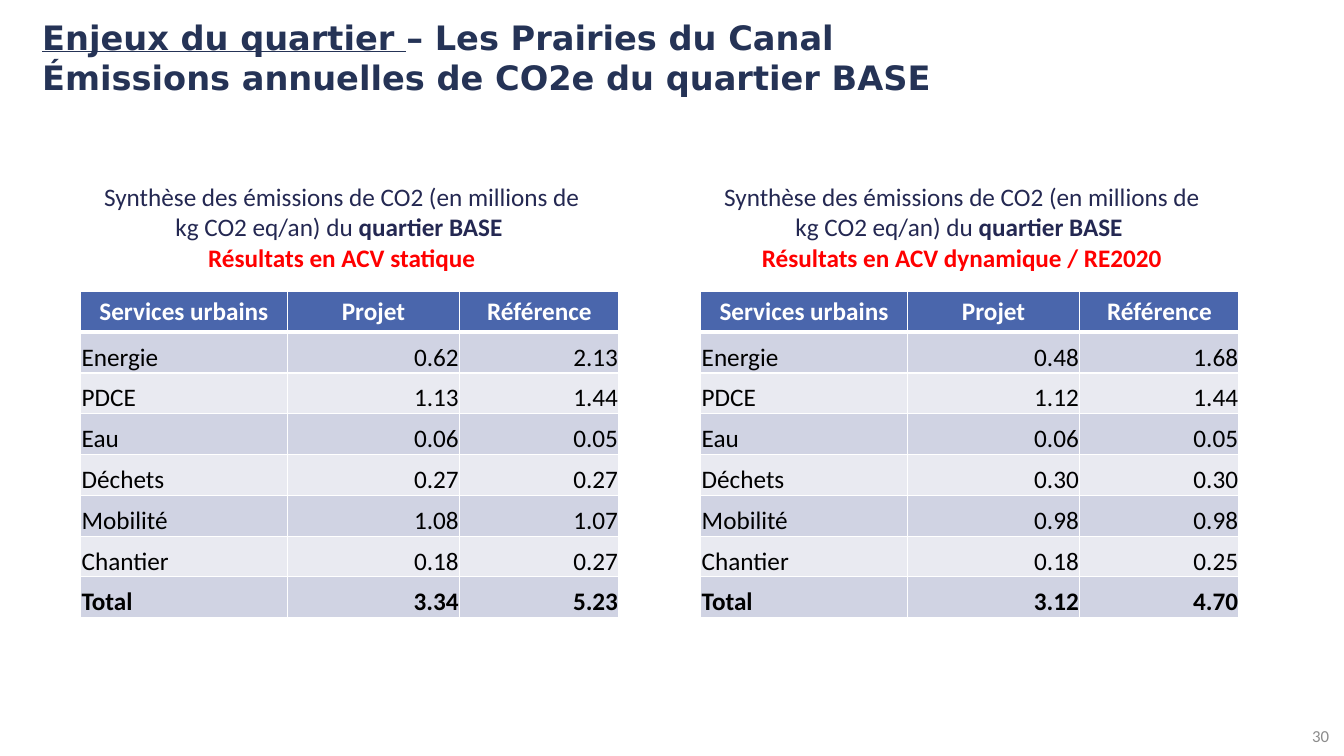
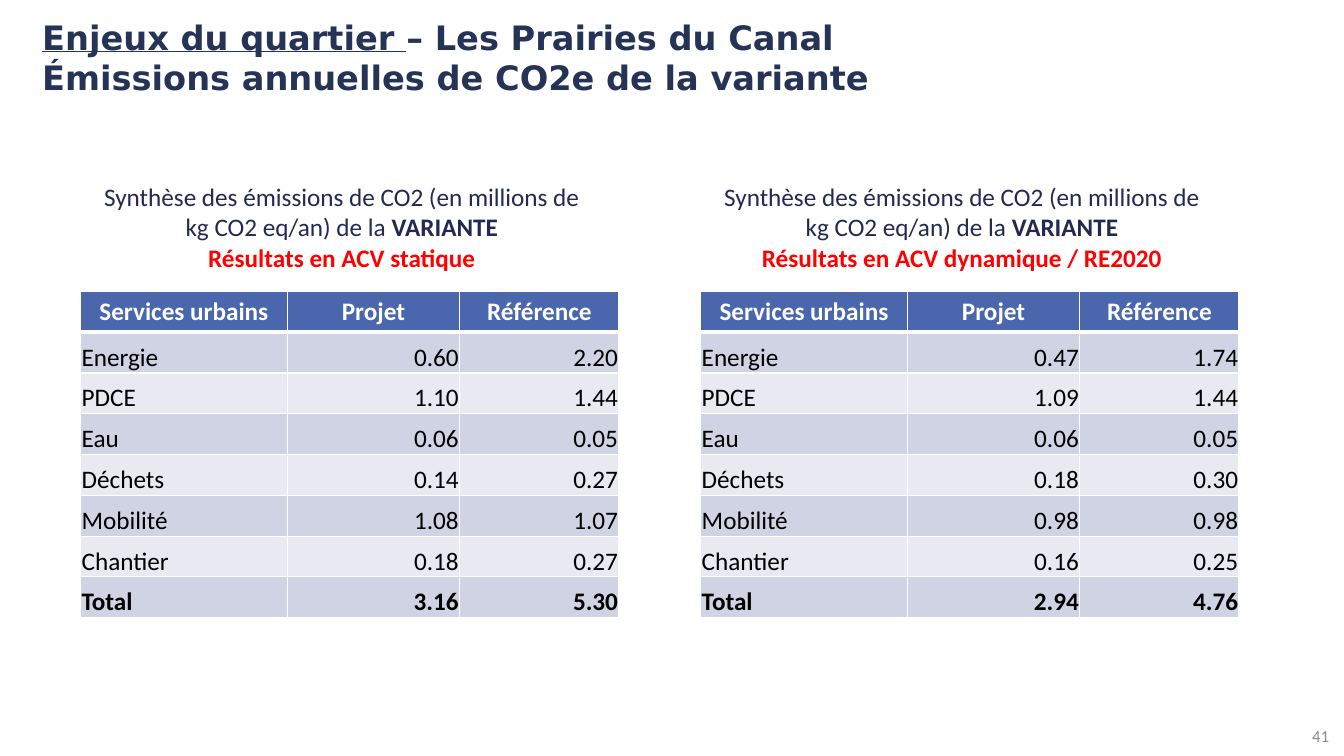
from dataclasses import dataclass

from lxml import etree
from pptx import Presentation
from pptx.dml.color import RGBColor
from pptx.enum.text import MSO_ANCHOR, PP_ALIGN
from pptx.oxml.ns import qn
from pptx.slide import Slide
from pptx.table import _Cell
from pptx.text.text import TextFrame, _Paragraph
from pptx.util import Inches, Length, Pt

LEFT, CENTER, RIGHT = PP_ALIGN.LEFT, PP_ALIGN.CENTER, PP_ALIGN.RIGHT
TOP, MIDDLE, BOTTOM = MSO_ANCHOR.TOP, MSO_ANCHOR.MIDDLE, MSO_ANCHOR.BOTTOM


@dataclass(frozen=True)
class Theme:
    title_font: str = "DejaVu Sans"
    body_font: str = "Calibri"
    title_size: int = 24
    body_size: int = 18
    page_size: int = 12
    title: str = "253356"
    caption: str = "242852"
    method: str = "FF0000"
    page: str = "8C8C8C"
    header: str = "4A66AC"
    band_dark: str = "D0D3E3"
    band_light: str = "E9EAF1"
    white: str = "FFFFFF"
    black: str = "000000"
    grid_line: int = 1
    header_line: int = 3


THEME = Theme()


@dataclass(frozen=True)
class Results:
    """Emissions under one life-cycle method, one value per urban service."""
    method: str
    project: tuple[str, ...]
    reference: tuple[str, ...]


@dataclass(frozen=True)
class Synthesis:
    """Content of one slide."""
    page: str
    subject: str
    link: str
    scenario: str
    results: tuple[Results, ...]


TITLE_START = "Enjeux du quartier "
DISTRICT = "– Les Prairies du Canal"
TITLE_SUBJECT = "Émissions annuelles de CO2e "
CAPTION = "Synthèse des émissions de CO2 (en millions de kg CO2 eq/an) "
STATIC = "Résultats en ACV statique"
DYNAMIC = "Résultats en ACV dynamique / RE2020"
HEADERS = ("Services urbains", "Projet", "Référence")
SERVICES = ("Energie", "PDCE", "Eau", "Déchets", "Mobilité", "Chantier", "Total")

SYNTHESES = (
    Synthesis("30", "du quartier BASE", "du ", "quartier BASE ", (
        Results(STATIC,
                ("0.62", "1.13", "0.06", "0.27", "1.08", "0.18", "3.34"),
                ("2.13", "1.44", "0.05", "0.27", "1.07", "0.27", "5.23")),
        Results(DYNAMIC,
                ("0.48", "1.12", "0.06", "0.30", "0.98", "0.18", "3.12"),
                ("1.68", "1.44", "0.05", "0.30", "0.98", "0.25", "4.70")),
    )),
    Synthesis("41", "de la variante", "de la ", "VARIANTE", (
        Results(STATIC,
                ("0.60", "1.10", "0.06", "0.14", "1.08", "0.18", "3.16"),
                ("2.20", "1.44", "0.05", "0.27", "1.07", "0.27", "5.30")),
        Results(DYNAMIC,
                ("0.47", "1.09", "0.06", "0.18", "0.98", "0.16", "2.94"),
                ("1.74", "1.44", "0.05", "0.30", "0.98", "0.25", "4.76")),
    )),
)

# Layout of the two side-by-side panels
PANEL_LEFT, PANEL_STEP = Inches(0.8), Inches(6.15)
CAPTION_TOP, CAPTION_WIDTH, CAPTION_HEIGHT = Inches(1.75), Inches(5.18), Inches(1.01)
TABLE_TOP, TABLE_HEIGHT = Inches(2.89), Inches(3.24)
COLUMN_WIDTHS = (Inches(2.05), Inches(1.71), Inches(1.58))
CELL_MARGIN = Inches(0.01)


def add_text(paragraph: _Paragraph, text: str, size: int, color: str, bold: bool = False,
             underline: bool = False, font: str = THEME.body_font) -> None:
    run = paragraph.add_run()
    run.text = text
    run.font.name = font
    run.font.size = Pt(size)
    run.font.bold = bold
    run.font.underline = underline
    run.font.color.rgb = RGBColor.from_string(color)


def add_box(slide: Slide, left: Length, top: Length, width: Length, height: Length,
            align: PP_ALIGN, anchor: MSO_ANCHOR) -> TextFrame:
    frame = slide.shapes.add_textbox(left, top, width, height).text_frame
    frame.word_wrap = True
    frame.vertical_anchor = anchor
    frame.paragraphs[0].alignment = align
    return frame


def set_borders(cell: _Cell, top: int, bottom: int) -> None:
    """White cell borders, with widths in points."""
    properties = cell._tc.get_or_add_tcPr()
    widths = {"a:lnL": THEME.grid_line, "a:lnR": THEME.grid_line,
              "a:lnT": top, "a:lnB": bottom}
    for position, (side, width) in enumerate(widths.items()):
        line = etree.Element(qn(side), w=str(Pt(width)))
        fill = etree.SubElement(line, qn("a:solidFill"))
        etree.SubElement(fill, qn("a:srgbClr"), val=THEME.white)
        properties.insert(position, line)


def fill_cell(cell: _Cell, text: str, row: int, column: int) -> None:
    is_header = row == 0
    if is_header:
        background, color, align = THEME.header, THEME.white, CENTER
    else:
        background = THEME.band_dark if row % 2 else THEME.band_light
        color, align = THEME.black, RIGHT if column else LEFT
        cell.margin_left = cell.margin_right = cell.margin_top = CELL_MARGIN
        cell.margin_bottom = 0
    cell.vertical_anchor = TOP if is_header else BOTTOM
    cell.fill.solid()
    cell.fill.fore_color.rgb = RGBColor.from_string(background)
    set_borders(cell, THEME.header_line if row == 1 else THEME.grid_line,
                THEME.header_line if is_header else THEME.grid_line)
    paragraph = cell.text_frame.paragraphs[0]
    paragraph.alignment = align
    add_text(paragraph, text, THEME.body_size, color,
             bold=is_header or row == len(SERVICES))


def add_title(slide: Slide, subject: str) -> None:
    frame = add_box(slide, Inches(0.32), Inches(0.33), Inches(12.52), Inches(0.47),
                    LEFT, MIDDLE)
    heading = frame.paragraphs[0]
    style = dict(size=THEME.title_size, color=THEME.title, bold=True, font=THEME.title_font)
    add_text(heading, TITLE_START, underline=True, **style)
    add_text(heading, DISTRICT, **style)
    heading.add_line_break()
    add_text(heading, TITLE_SUBJECT + subject, **style)


def add_page_number(slide: Slide, page: str) -> None:
    frame = add_box(slide, Inches(12.84), Inches(7.09), Inches(0.44), Inches(0.41),
                    RIGHT, MIDDLE)
    add_text(frame.paragraphs[0], page, THEME.page_size, THEME.page)


def add_caption(slide: Slide, left: Length, synthesis: Synthesis, method: str) -> None:
    frame = add_box(slide, left, CAPTION_TOP, CAPTION_WIDTH, CAPTION_HEIGHT, CENTER, TOP)
    summary = frame.paragraphs[0]
    add_text(summary, CAPTION + synthesis.link, THEME.body_size, THEME.caption)
    add_text(summary, synthesis.scenario, THEME.body_size, THEME.caption, bold=True)
    method_line = frame.add_paragraph()
    method_line.alignment = CENTER
    add_text(method_line, method, THEME.body_size, THEME.method, bold=True)


def add_results_table(slide: Slide, left: Length, results: Results) -> None:
    rows = (HEADERS, *zip(SERVICES, results.project, results.reference))
    table = slide.shapes.add_table(len(rows), len(HEADERS), left, TABLE_TOP,
                                   sum(COLUMN_WIDTHS), TABLE_HEIGHT).table
    for column, width in zip(table.columns, COLUMN_WIDTHS):
        column.width = width
    for row, texts in enumerate(rows):
        table.rows[row].height = TABLE_HEIGHT // len(rows)
        for column, text in enumerate(texts):
            fill_cell(table.cell(row, column), text, row, column)


def main() -> None:
    deck = Presentation()
    deck.slide_width, deck.slide_height = Inches(13.33), Inches(7.5)
    blank = deck.slide_layouts[6]
    for synthesis in SYNTHESES:
        slide = deck.slides.add_slide(blank)
        add_title(slide, synthesis.subject)
        add_page_number(slide, synthesis.page)
        for panel, results in enumerate(synthesis.results):
            left = PANEL_LEFT + panel * PANEL_STEP
            add_results_table(slide, left, results)
            add_caption(slide, left, synthesis, results.method)
    deck.save("out.pptx")


if __name__ == "__main__":
    main()
